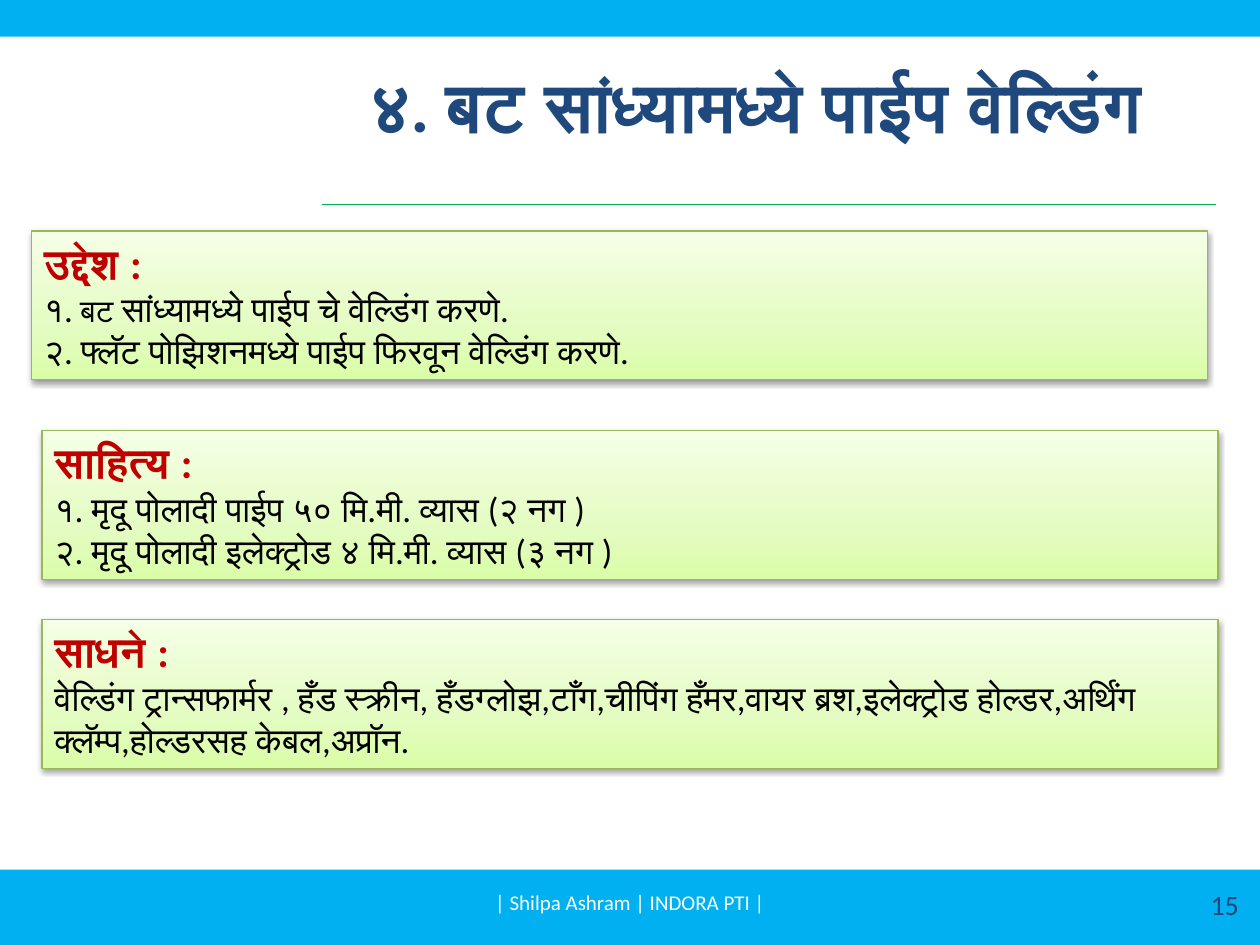
from dataclasses import dataclass

import lxml.etree
import pptx
import pptx.dml.color
import pptx.enum.shapes
import pptx.enum.text
import pptx.oxml.ns
import pptx.util

Pt = pptx.util.Pt
ANCHOR = pptx.enum.text.MSO_ANCHOR
ALIGN = pptx.enum.text.PP_ALIGN


@dataclass(frozen=True)
class Theme:
    font: str = "Calibri"
    band: str = "00B0F0"
    rule: str = "00B050"
    navy: str = "1F497D"
    heading: str = "C00000"
    ink: str = "000000"
    white: str = "FFFFFF"
    panel_line: str = "98B955"
    panel_stops: tuple = ((0, "DAFDA7"), (35, "E4FCC2"), (100, "F5FFE7"))
    title_size: int = 40
    heading_size: int = 24
    body_size: int = 20
    small_body_size: int = 18
    number_size: int = 16
    footer_size: int = 12
    line_width: float = 0.75


THEME = Theme()
PAGE_WIDTH, PAGE_HEIGHT = 720, 540
TITLE = "४. बट सांध्यामध्ये पाईप वेल्डिंग"
FOOTER = "| Shilpa Ashram | INDORA PTI |"
PAGE_NUMBER = "15"

# Left, top, heading, lines; each line is a list of (text, size) spans.
SIZE = THEME.body_size
PANELS = [
    (18, 132, "उद्देश :", [
        [("१.", SIZE), (" बट ", THEME.small_body_size),
         ("सांध्यामध्ये पाईप चे वेल्डिंग करणे.", SIZE)],
        [("२. फ्लॅट पोझिशनमध्ये पाईप फिरवून वेल्डिंग करणे.", SIZE)],
    ]),
    (24, 246, "साहित्य :", [
        [("१. मृदू पोलादी पाईप ५० मि.मी. व्यास (२ नग )", SIZE)],
        [("२. मृदू पोलादी इलेक्ट्रोड ४ मि.मी. व्यास (३ नग )", SIZE)],
    ]),
    (24, 354, "साधने :", [
        [("वेल्डिंग ट्रान्सफार्मर , हँड स्क्रीन, हँडग्लोझ,टाँग,चीपिंग हँमर,"
          "वायर ब्रश,इलेक्ट्रोड होल्डर,अर्थिंग क्लॅम्प,होल्डरसह केबल,अप्रॉन.", SIZE)],
    ]),
]
PANEL_WIDTH, PANEL_HEIGHT = 672, 85


def color(value):
    return pptx.dml.color.RGBColor.from_string(value)


def add_element(parent, tag, **attributes):
    element = lxml.etree.SubElement(parent, pptx.oxml.ns.qn(tag))
    for name, value in attributes.items():
        element.set(name, str(value))
    return element


def style(span, size, value, bold=False):
    span.font.name = THEME.font
    span.font.size = Pt(size)
    span.font.bold = bold
    span.font.color.rgb = color(value)


def write_line(box, text, size, value, align, bold=False):
    frame = box.text_frame
    frame.text = text
    frame.word_wrap = True
    frame.vertical_anchor = ANCHOR.MIDDLE
    para = frame.paragraphs[0]
    para.alignment = align
    style(para.runs[0], size, value, bold)


def add_rectangle(page, left, top, width, height):
    box = page.shapes.add_shape(pptx.enum.shapes.MSO_SHAPE.RECTANGLE,
                                Pt(left), Pt(top), Pt(width), Pt(height))
    box.shadow.inherit = False
    return box


def add_band(page, top, height):
    band = add_rectangle(page, 0, top, PAGE_WIDTH, height)
    band.fill.solid()
    band.fill.fore_color.rgb = color(THEME.band)
    band.line.fill.background()


def add_rule(page, left, right, top):
    rule = page.shapes.add_connector(pptx.enum.shapes.MSO_CONNECTOR.STRAIGHT,
                                     Pt(left), Pt(top), Pt(right), Pt(top))
    rule.line.color.rgb = color(THEME.rule)
    rule.line.width = Pt(THEME.line_width)
    add_element(rule._element.spPr, "a:effectLst")


def add_label(page, left, top, width, height, text, size, value, align):
    box = page.shapes.add_textbox(Pt(left), Pt(top), Pt(width), Pt(height))
    write_line(box, text, size, value, align)


def decorate_panel(box):
    """Give the box its three-stop gradient, outline and soft shadow."""
    box.fill.gradient()
    box.fill.gradient_angle = 90
    properties = box._element.spPr
    stops = properties.find(".//" + pptx.oxml.ns.qn("a:gsLst"))
    for stop in list(stops):
        stops.remove(stop)
    for position, value in THEME.panel_stops:
        stop = add_element(stops, "a:gs", pos=position * 1000)
        add_element(stop, "a:srgbClr", val=value)
    box.line.color.rgb = color(THEME.panel_line)
    box.line.width = Pt(THEME.line_width)
    effects = properties.find(pptx.oxml.ns.qn("a:effectLst"))
    shadow = add_element(effects, "a:outerShdw", blurRad=int(Pt(3.1)),
                         dist=int(Pt(1.6)), dir=90 * 60000, rotWithShape=0)
    shade = add_element(shadow, "a:srgbClr", val=THEME.ink)
    add_element(shade, "a:alpha", val=38000)


def add_panel(page, left, top, heading, lines):
    box = add_rectangle(page, left, top, PANEL_WIDTH, PANEL_HEIGHT)
    decorate_panel(box)
    frame = box.text_frame
    write_line(box, heading, THEME.heading_size, THEME.heading, ALIGN.LEFT, bold=True)
    frame.vertical_anchor = ANCHOR.TOP
    frame.auto_size = pptx.enum.text.MSO_AUTO_SIZE.SHAPE_TO_FIT_TEXT
    for line in lines:
        para = frame.add_paragraph()
        para.alignment = ALIGN.LEFT
        for text, size in line:
            span = para.add_run()
            span.text = text
            style(span, size, THEME.ink)


def main():
    deck = pptx.Presentation()
    deck.slide_width, deck.slide_height = Pt(PAGE_WIDTH), Pt(PAGE_HEIGHT)
    page = deck.slides.add_slide(deck.slide_layouts[5])

    title = page.shapes.title
    title.left, title.top, title.width, title.height = Pt(152), Pt(45), Pt(560), Pt(30)
    write_line(title, TITLE, THEME.title_size, THEME.navy, ALIGN.CENTER, bold=True)

    add_band(page, 497, 43)
    add_rule(page, 184, 695, 117)
    add_band(page, 0, 21)
    add_label(page, 547, 502, 168, 29, PAGE_NUMBER,
              THEME.number_size, THEME.navy, ALIGN.RIGHT)
    add_label(page, 246, 501, 228, 29, FOOTER,
              THEME.footer_size, THEME.white, ALIGN.CENTER)
    for panel in PANELS:
        add_panel(page, *panel)

    deck.save("out.pptx")


if __name__ == "__main__":
    main()
